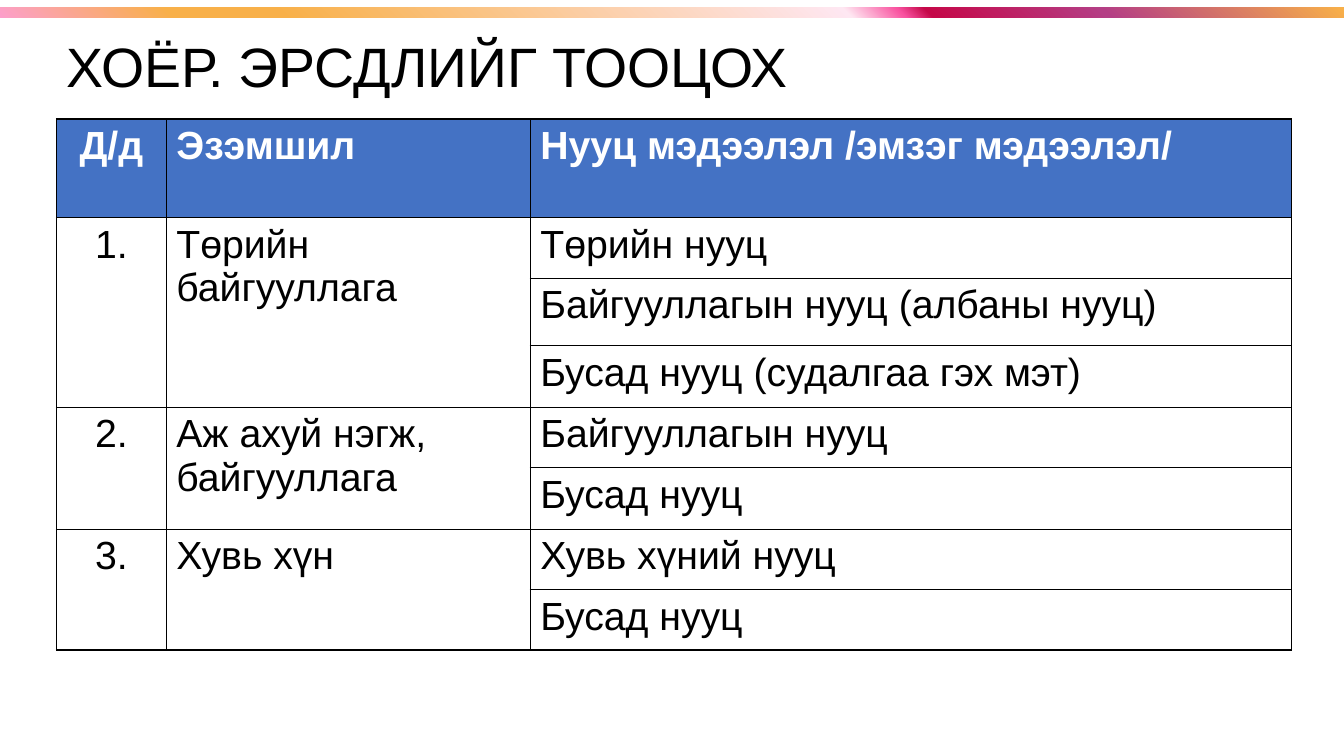
from dataclasses import dataclass
from lxml import etree
from pptx import Presentation
from pptx.dml.color import RGBColor
from pptx.enum.shapes import MSO_SHAPE
from pptx.enum.text import MSO_ANCHOR, PP_ALIGN
from pptx.oxml.ns import qn
from pptx.slide import Slide
from pptx.table import Table, _Cell
from pptx.util import Inches, Pt

RECT = MSO_SHAPE.RECTANGLE
MIDDLE = MSO_ANCHOR.MIDDLE
LEFT, CENTER = PP_ALIGN.LEFT, PP_ALIGN.CENTER

BLACK = RGBColor(0x00, 0x00, 0x00)
WHITE = RGBColor(0xFF, 0xFF, 0xFF)
BLUE = RGBColor(0x44, 0x72, 0xC4)
PINK = RGBColor(0xFC, 0x9F, 0xCB)
AMBER = RGBColor(0xF8, 0xB0, 0x49)
BLUSH = RGBColor(0xFE, 0xE7, 0xF2)
ROSE = RGBColor(0xF9, 0x52, 0xA0)
CRIMSON = RGBColor(0xC5, 0x08, 0x49)
PURPLE = RGBColor(0xB4, 0x3E, 0x85)

FONT = "Arial"
WIDTH, HEIGHT = Inches(13.33), Inches(7.5)
MARGIN = Inches(0.56)
TABLE_TOP = Inches(1.18)
COLUMNS = (1.09, 3.61, 7.55)
ROWS = (0.98, 0.6, 0.67, 0.61, 0.6, 0.61, 0.6, 0.6)
HEADERS = ("Д/д", "Эзэмшил", "Нууц мэдээлэл /эмзэг мэдээлэл/")
BAR_ANGLE = 315


@dataclass(frozen=True)
class Stop:
    percent: int
    color: RGBColor


@dataclass(frozen=True)
class Owner:
    name: str
    secrets: tuple[str, ...]


BAR_STOPS = (
    Stop(0, PINK), Stop(13, AMBER), Stop(21, AMBER), Stop(63, BLUSH),
    Stop(67, ROSE), Stop(69, CRIMSON), Stop(82, PURPLE), Stop(100, AMBER),
)

OWNERS = (
    Owner("Төрийн байгууллага",
          ("Төрийн нууц", "Байгууллагын нууц (албаны нууц)",
           "Бусад нууц (судалгаа гэх мэт)")),
    Owner("Аж ахуй нэгж, байгууллага", ("Байгууллагын нууц", "Бусад нууц")),
    Owner("Хувь хүн", ("Хувь хүний нууц", "Бусад нууц")),
)


def add_bar(s: Slide) -> None:
    bar = s.shapes.add_shape(RECT, 0, int(HEIGHT * 0.01), WIDTH, Inches(0.1))
    bar.shadow.inherit = False
    bar.line.fill.background()
    bar.fill.gradient()
    grad = bar.fill._xPr.find(qn("a:gradFill"))
    stops = grad.find(qn("a:gsLst"))
    for gs in list(stops):
        stops.remove(gs)
    for stop in BAR_STOPS:
        gs = etree.SubElement(stops, qn("a:gs"), pos=str(stop.percent * 1000))
        etree.SubElement(gs, qn("a:srgbClr"), val=str(stop.color))
    lin = grad.find(qn("a:lin"))
    lin.set("ang", str(BAR_ANGLE * 60000))
    lin.set("scaled", "0")


def add_title(s: Slide, text: str) -> None:
    box = s.shapes.add_textbox(MARGIN, Inches(0.34), Inches(11.5), Inches(0.7))
    tf = box.text_frame
    tf.word_wrap = True
    tf.vertical_anchor = MIDDLE
    tf.text = text
    p = tf.paragraphs[0]
    p.line_spacing = 0.9
    r = p.runs[0]
    r.font.name, r.font.size = FONT, Pt(39.6)
    r.font.color.rgb = BLACK


def add_borders(cell: _Cell) -> None:
    props = cell._tc.get_or_add_tcPr()
    for i, side in enumerate(("lnL", "lnR", "lnT", "lnB")):
        ln = etree.Element(qn(f"a:{side}"), w=str(Pt(1)))
        fill = etree.SubElement(ln, qn("a:solidFill"))
        etree.SubElement(fill, qn("a:srgbClr"), val=str(BLACK))
        props.insert(i, ln)


def write_cell(table: Table, row: int, col: int, text: str) -> None:
    cell = table.cell(row, col)
    cell.text_frame.text = text
    p = cell.text_frame.paragraphs[0]
    p.alignment = LEFT if col else CENTER
    r = p.runs[0]
    r.font.name, r.font.size = FONT, Pt(28)
    r.font.bold = row == 0
    r.font.color.rgb = BLACK if row else WHITE


def add_secrets_table(s: Slide) -> None:
    frame = s.shapes.add_table(len(ROWS), len(COLUMNS), MARGIN, TABLE_TOP,
                               Inches(sum(COLUMNS)), Inches(sum(ROWS)))
    table = frame.table
    table.horz_banding = False
    for column, width in zip(table.columns, COLUMNS):
        column.width = Inches(width)
    for i, height in enumerate(ROWS):
        table.rows[i].height = Inches(height)
        for cell in table.rows[i].cells:
            if i == 0:
                cell.fill.solid()
                cell.fill.fore_color.rgb = BLUE
            else:
                cell.fill.background()
            add_borders(cell)
    for col, header in enumerate(HEADERS):
        write_cell(table, 0, col, header)
    row = 1
    for number, owner in enumerate(OWNERS, 1):
        last = row + len(owner.secrets) - 1
        for col, text in enumerate((f"{number}.", owner.name)):
            table.cell(row, col).merge(table.cell(last, col))
            write_cell(table, row, col, text)
        for i, secret in enumerate(owner.secrets):
            write_cell(table, row + i, 2, secret)
        row = last + 1


def main() -> None:
    prs = Presentation()
    prs.slide_width, prs.slide_height = WIDTH, HEIGHT
    s = prs.slides.add_slide(prs.slide_layouts[6])
    add_secrets_table(s)
    add_bar(s)
    add_title(s, "ХОЁР. ЭРСДЛИЙГ ТООЦОХ")
    prs.save("out.pptx")


if __name__ == "__main__":
    main()
